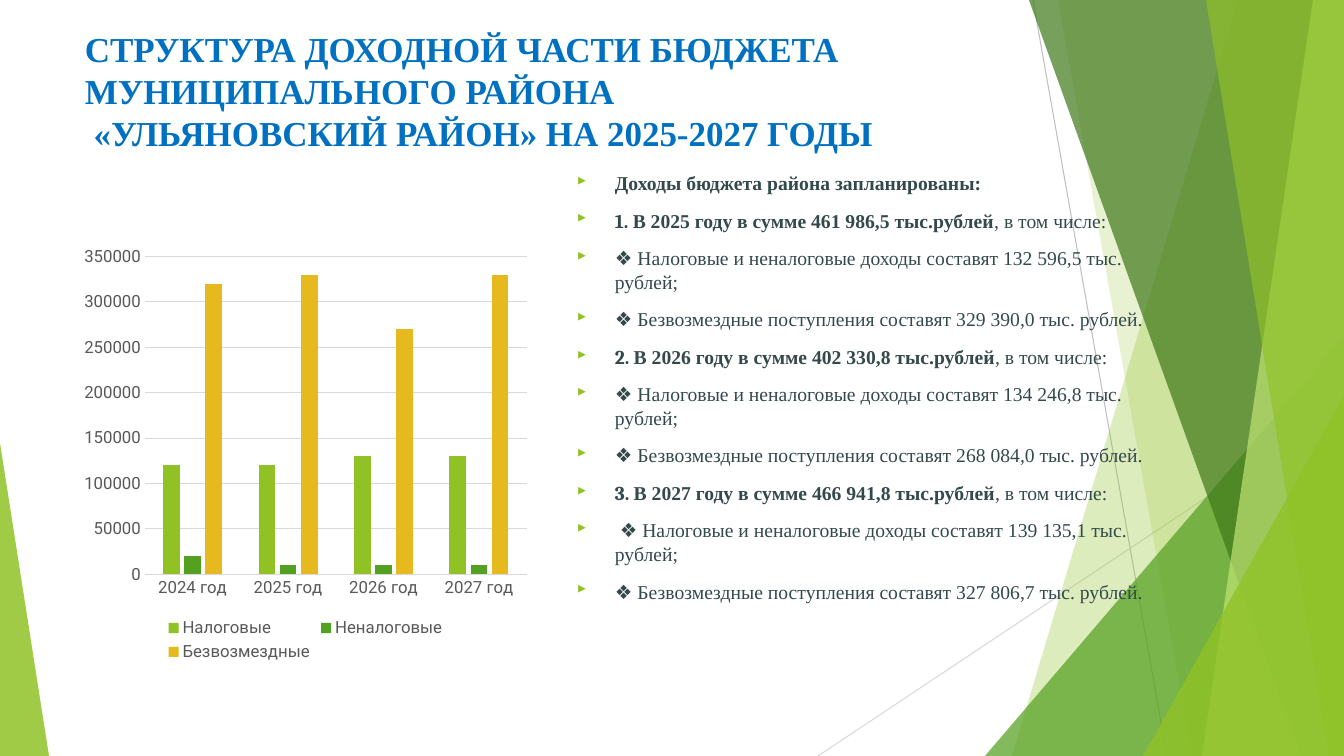
from lxml import etree
from pptx import Presentation
from pptx.chart.data import CategoryChartData
from pptx.dml.color import RGBColor
from pptx.enum.chart import XL_CHART_TYPE, XL_LEGEND_POSITION, XL_TICK_MARK
from pptx.enum.shapes import MSO_CONNECTOR, MSO_SHAPE
from pptx.enum.text import MSO_ANCHOR
from pptx.oxml.ns import qn
from pptx.util import Pt

COLUMN_CLUSTERED = XL_CHART_TYPE.COLUMN_CLUSTERED
LEGEND_BOTTOM = XL_LEGEND_POSITION.BOTTOM
NO_TICK = XL_TICK_MARK.NONE
STRAIGHT = MSO_CONNECTOR.STRAIGHT
TRIANGLE = MSO_SHAPE.ISOSCELES_TRIANGLE
TOP = MSO_ANCHOR.TOP

LIME = RGBColor(0x90, 0xC2, 0x26)
GREEN = RGBColor(0x54, 0xA0, 0x21)
DARK_GREEN = RGBColor(0x3F, 0x78, 0x19)
PALE_LIME = RGBColor(0xC0, 0xE4, 0x74)
GOLD = RGBColor(0xE6, 0xB9, 0x1E)
BLUE = RGBColor(0x00, 0x70, 0xC0)
SLATE = RGBColor(0x34, 0x49, 0x4A)
GREY = RGBColor(0x59, 0x59, 0x59)
SILVER = RGBColor(0xBF, 0xBF, 0xBF)
LIGHT_GREY = RGBColor(0xD9, 0xD9, 0xD9)

SERIF = "Times New Roman"
NUMBER_FONT = "Cambria"
SANS = "Roboto"
BULLET_FONT = "Wingdings 3"

WIDTH, HEIGHT = 1344, 756
EMU_PER_PX = 914400 / 100.8


def px(length):
    return round(length * EMU_PER_PX)


class SlideBuilder:
    def __init__(self, presentation):
        self.slide = presentation.slides.add_slide(presentation.slide_layouts[6])
        self.shapes = self.slide.shapes

    def paint(self, shape, color, opacity):
        shape.shadow.inherit = False
        shape.line.fill.background()
        shape.fill.solid()
        shape.fill.fore_color.rgb = color
        color_element = shape.fill._xPr.find(qn("a:solidFill"))[0]
        etree.SubElement(color_element, qn("a:alpha"), val=str(opacity * 1000))

    def line(self, start, end, color):
        connector = self.shapes.add_connector(STRAIGHT, *map(px, start + end))
        connector.line.color.rgb = color
        connector.line.width = Pt(0.75)
        etree.SubElement(connector._element.spPr, qn("a:effectLst"))

    def band(self, top_x, bottom_x, color, opacity):
        builder = self.shapes.build_freeform(top_x, 0, scale=EMU_PER_PX)
        builder.add_line_segments([(WIDTH, 0), (WIDTH, HEIGHT), (bottom_x, HEIGHT)])
        self.paint(builder.convert_to_shape(), color, opacity)

    def triangle(self, box, apex, color, opacity):
        shape = self.shapes.add_shape(TRIANGLE, *map(px, box))
        shape.adjustments[0] = apex
        self.paint(shape, color, opacity)

    def text_frame(self, box):
        frame = self.shapes.add_textbox(*map(px, box)).text_frame
        frame.word_wrap = True
        frame.vertical_anchor = TOP
        return frame

    def run(self, paragraph, text, size, color, bold, font=SERIF):
        run = paragraph.add_run()
        run.text = text
        run.font.name = font
        run.font.size = Pt(size)
        run.font.bold = bold
        run.font.color.rgb = color

    def title(self, box, lines):
        paragraph = self.text_frame(box).paragraphs[0]
        paragraph.line_spacing = Pt(30)
        for index, text in enumerate(lines):
            if index:
                paragraph.add_line_break()
            self.run(paragraph, text, 25, BLUE, True)

    def bullet(self, paragraph):
        properties = paragraph._p.get_or_add_pPr()
        properties.set("marL", str(px(38)))
        properties.set("indent", str(-px(38)))
        bullet_color = etree.SubElement(properties, qn("a:buClr"))
        etree.SubElement(bullet_color, qn("a:srgbClr"), val=str(LIME))
        etree.SubElement(properties, qn("a:buSzPct"), val="80000")
        etree.SubElement(properties, qn("a:buFont"), typeface=BULLET_FONT, charset="2")
        etree.SubElement(properties, qn("a:buChar"), char="}")

    def bullet_list(self, box, items):
        frame = self.text_frame(box)
        for index, item in enumerate(items):
            paragraph = frame.add_paragraph() if index else frame.paragraphs[0]
            self.bullet(paragraph)
            paragraph.line_spacing = Pt(16.8)
            paragraph.space_before = Pt(10 if index else 0)
            for text, bold, font in item:
                self.run(paragraph, text, 14, SLATE, bold, font)

    def style_font(self, font):
        font.name = SANS
        font.size = Pt(12)
        font.color.rgb = GREY

    def column_chart(self, box, categories, series):
        data = CategoryChartData()
        data.categories = categories
        for name, values, _ in series:
            data.add_series(name, values)
        chart = self.shapes.add_chart(COLUMN_CLUSTERED, *map(px, box), data).chart
        self.style_font(chart.font)
        chart.has_title = False
        chart.has_legend = True
        chart.legend.position = LEGEND_BOTTOM
        chart.legend.include_in_layout = False
        self.style_font(chart.legend.font)
        for axis in (chart.category_axis, chart.value_axis):
            axis.major_tick_mark = axis.minor_tick_mark = NO_TICK
            self.style_font(axis.tick_labels.font)
        chart.category_axis.format.line.color.rgb = LIGHT_GREY
        chart.category_axis.format.line.width = Pt(0.75)
        chart.value_axis.format.line.fill.background()
        chart.value_axis.minimum_scale = 0
        chart.value_axis.maximum_scale = 350000
        chart.value_axis.major_unit = 50000
        gridlines = chart.value_axis.major_gridlines.format.line
        gridlines.color.rgb = LIGHT_GREY
        gridlines.width = Pt(0.75)
        plot = chart.plots[0]
        plot.gap_width = 219
        plot.overlap = -27
        plot.vary_by_categories = False
        for column, (_, _, color) in zip(plot.series, series):
            column.format.fill.solid()
            column.format.fill.fore_color.rgb = color


def budget_items(budgets):
    items = [[("Доходы бюджета района запланированы:", True, SERIF)]]
    for number, (year, total, own, grants, lead) in enumerate(budgets, 1):
        items.append([
            (f"{number}. ", True, NUMBER_FONT),
            (f"В {year} году в сумме {total} тыс.рублей", True, SERIF),
            (", в том числе:", False, SERIF),
        ])
        items.append([
            (f"{lead}❖ ", False, SANS),
            (f"Налоговые и неналоговые доходы составят {own} тыс. рублей;", False, SERIF),
        ])
        items.append([
            ("❖ ", False, SANS),
            (f"Безвозмездные поступления составят {grants} тыс. рублей.", False, SERIF),
        ])
    return items


def main():
    presentation = Presentation()
    presentation.slide_width = px(WIDTH)
    presentation.slide_height = px(HEIGHT)
    builder = SlideBuilder(presentation)

    builder.line((1033, 0), (1167, HEIGHT), SILVER)
    builder.line((WIDTH, 406), (818, HEIGHT), LIGHT_GREY)
    builder.band(1238, 1012, LIME, 30)
    builder.band(1058, 1192, LIME, 20)
    builder.triangle((985, 336, 359, 420), 1, GREEN, 72)
    builder.band(1029, 1301, DARK_GREEN, 70)
    builder.band(1313, 1202, PALE_LIME, 70)
    builder.band(1206, 1329, LIME, 65)
    builder.triangle((1143, 396, 201, 360), 1, LIME, 80)
    builder.triangle((0, 443, 49, 313), 0, LIME, 85)

    builder.title((75, 23, 948, 160), [
        "СТРУКТУРА ДОХОДНОЙ ЧАСТИ БЮДЖЕТА МУНИЦИПАЛЬНОГО РАЙОНА",
        " «УЛЬЯНОВСКИЙ РАЙОН» НА 2025-2027 ГОДЫ",
    ])
    builder.column_chart(
        (75, 238, 461, 428),
        [f"{year} год" for year in range(2024, 2028)],
        [
            ("Налоговые", (120000, 120000, 130000, 130000), LIME),
            ("Неналоговые", (20000, 10000, 10000, 10000), GREEN),
            ("Безвозмездные", (320000, 330000, 270000, 330000), GOLD),
        ],
    )
    builder.bullet_list((567, 166, 591, 500), budget_items([
        (2025, "461 986,5", "132 596,5", "329 390,0", ""),
        (2026, "402 330,8", "134 246,8", "268 084,0", ""),
        (2027, "466 941,8", "139 135,1", "327 806,7", " "),
    ]))
    presentation.save("out.pptx")


if __name__ == "__main__":
    main()
